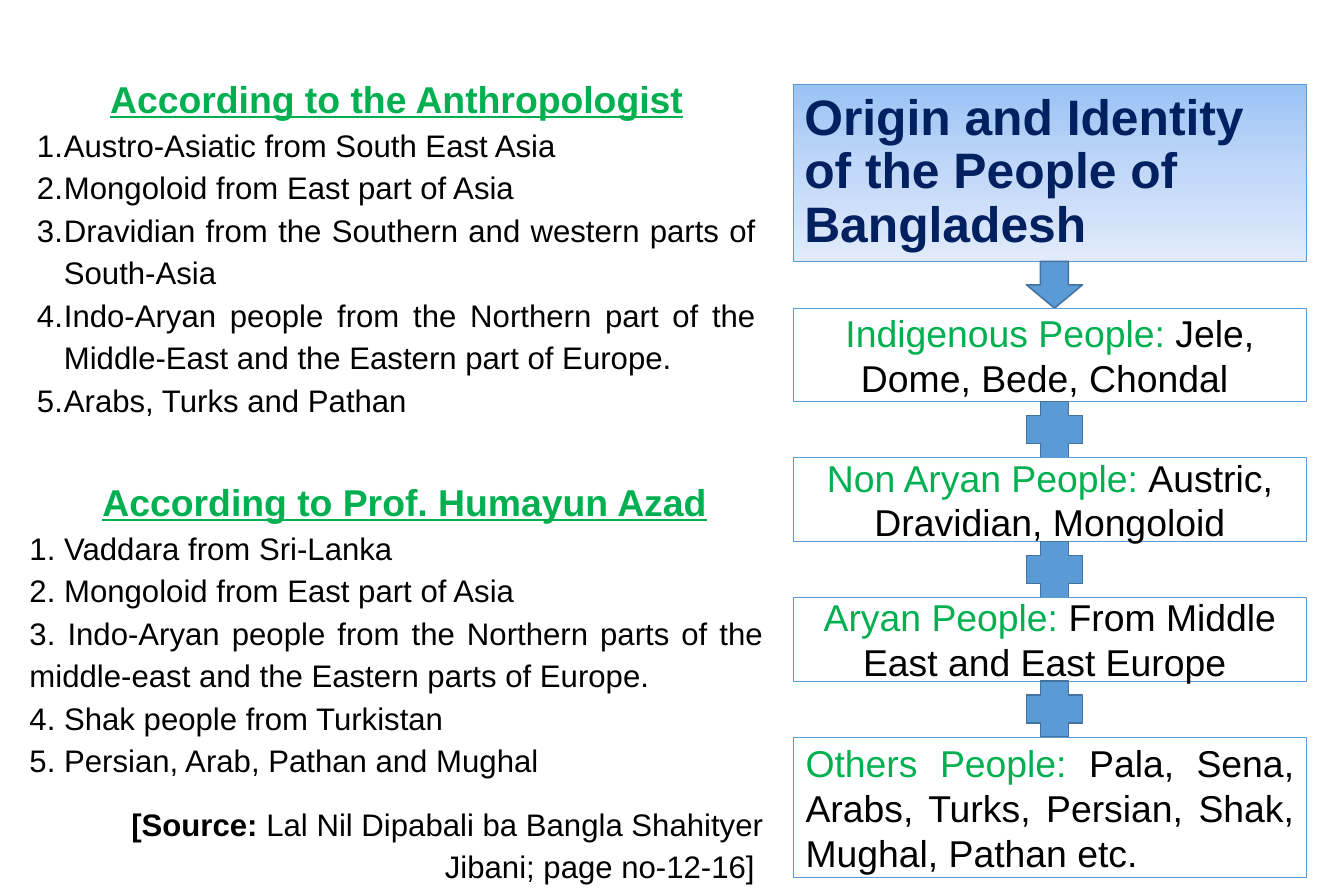
from copy import deepcopy
from pptx import Presentation
from pptx.dml.color import RGBColor
from pptx.enum.shapes import MSO_SHAPE as Preset
from pptx.enum.text import MSO_ANCHOR as Anchor, MSO_AUTO_SIZE as AutoSize, PP_ALIGN as Align
from pptx.oxml.ns import qn
from pptx.oxml.xmlchemy import OxmlElement
from pptx.util import Cm, Pt

NAVY = RGBColor(0x00, 0x20, 0x60)
GREEN = RGBColor(0x00, 0xB0, 0x50)
BLACK = RGBColor(0x00, 0x00, 0x00)
BLUE = RGBColor(0x5B, 0x9B, 0xD5)
DARK_BLUE = RGBColor(0x43, 0x73, 0x9E)
TITLE_SHADES = [RGBColor(0x9A, 0xC3, 0xF5), RGBColor(0xC2, 0xD8, 0xF8), RGBColor(0xE1, 0xEB, 0xFB)]

TITLE = {"size": Pt(32), "bold": True, "color": NAVY}
HEADING = {"size": Pt(24), "bold": True, "underline": True, "color": GREEN}
ITEM = {"size": Pt(20), "bold": False, "color": BLACK}
SOURCE = {"size": Pt(20), "bold": True, "color": BLACK}
GROUP = {"size": Pt(24), "color": GREEN}
MEMBERS = {"size": Pt(24), "color": BLACK}
LIST_SPACING = 1.14


def write(paragraph, align, runs, left=0, first=0, spacing=1.0):
    paragraph.alignment = align
    paragraph.line_spacing = spacing
    properties = paragraph._p.get_or_add_pPr()
    properties.set("marL", str(Cm(left)))
    properties.set("indent", str(Cm(first)))
    for text, formats in runs:
        run = paragraph.add_run()
        run.text = text
        run.font.name = "Arial"
        for name, value in formats.items():
            if name == "color":
                run.font.color.rgb = value
            else:
                setattr(run.font, name, value)
    return properties


def set_frame(frame, anchor, side, edge):
    formats = {
        "word_wrap": True, "auto_size": AutoSize.NONE, "vertical_anchor": anchor,
        "margin_left": Cm(side), "margin_right": Cm(side),
        "margin_top": Cm(edge), "margin_bottom": Cm(edge),
    }
    for name, value in formats.items():
        setattr(frame, name, value)


deck = Presentation()
deck.slide_width, deck.slide_height = Cm(30.48), Cm(20.32)
slide = deck.slides.add_slide(deck.slide_layouts[5])
shapes = slide.shapes

column_left, column_width = 17.99, 11.64

title = shapes.title
title.left, title.top = Cm(column_left), Cm(1.91)
title.width, title.height = Cm(column_width), Cm(4.02)
title.fill.gradient()
title.fill.gradient_angle = 270
stop_list = title.element.find(".//" + qn("a:gsLst"))
stop_list.append(deepcopy(stop_list[0]))
for stop, position, shade in zip(title.fill.gradient_stops, (0, 0.5, 1), TITLE_SHADES):
    stop.position = position
    stop.color.rgb = shade
title.line.color.rgb = BLUE
title.line.width = Pt(0.75)
set_frame(title.text_frame, Anchor.MIDDLE, 0.25, 0.13)
title_line = title.text_frame.paragraphs[0]
write(title_line, Align.LEFT, [("Origin and Identity ", TITLE)], spacing=0.9)
title_line.add_line_break()
write(title_line, Align.LEFT, [("of the People of Bangladesh", TITLE)], spacing=0.9)

azad = shapes.add_textbox(Cm(0.42), Cm(10.59), Cm(17.15), Cm(9.73)).text_frame
set_frame(azad, Anchor.TOP, 0.25, 0.13)
write(azad.paragraphs[0], Align.CENTER, [("According to Prof. Humayun Azad", HEADING)],
      1.17, -0.81, LIST_SPACING)
azad_items = [
    ("1. Vaddara from Sri-Lanka", 1.07),
    ("2. Mongoloid from East part of Asia", 1.07),
    ("3. Indo-Aryan people from the Northern parts of the middle-east "
     "and the Eastern parts of Europe.", 0),
    ("4. Shak people from Turkistan", 1.07),
    ("5. Persian, Arab, Pathan and Mughal", 1.07),
]
for text, hanging in azad_items:
    write(azad.add_paragraph(), Align.JUSTIFY, [(text, ITEM)], hanging, -hanging, LIST_SPACING)
source = azad.add_paragraph()
write(source, Align.RIGHT,
      [("[Source: ", SOURCE), ("Lal Nil Dipabali ba Bangla Shahityer Jibani; page no-12-16] ", ITEM)],
      1.17, -0.81, LIST_SPACING)
source.space_before = Pt(13.5)

anthropologist = shapes.add_textbox(Cm(0.64), Cm(1.48), Cm(16.71), Cm(8.2)).text_frame
set_frame(anthropologist, Anchor.TOP, 0.2, 0.1)
write(anthropologist.paragraphs[0], Align.CENTER,
      [("According to the Anthropologist", HEADING)], spacing=LIST_SPACING)
anthropologist_items = [
    "Austro-Asiatic from South East Asia",
    "Mongoloid from East part of Asia",
    "Dravidian from the Southern and western parts of South-Asia",
    "Indo-Aryan people from the Northern part of the Middle-East and the Eastern part of Europe.",
    "Arabs, Turks and Pathan",
]
for text in anthropologist_items:
    properties = write(anthropologist.add_paragraph(), Align.JUSTIFY, [(text, ITEM)],
                       0.61, -0.61, LIST_SPACING)
    numbering = OxmlElement("a:buAutoNum")
    numbering.set("type", "arabicPeriod")
    properties.append(numbering)

groups = [
    ("Indigenous People: ", "Jele, Dome, Bede, Chondal ", 2.12, Align.CENTER, Preset.DOWN_ARROW, 1.06),
    ("Non Aryan People: ", "Austric, Dravidian, Mongoloid", 1.9, Align.CENTER, Preset.CROSS, 1.27),
    ("Aryan People:", " From Middle East and East Europe ", 1.9, Align.CENTER, Preset.CROSS, 1.27),
    ("Others People: ", "Pala, Sena, Arabs, Turks, Persian, Shak, Mughal, Pathan etc. ",
     3.18, Align.JUSTIFY, Preset.CROSS, 1.27),
]
top = 5.93
for group, members, height, align, sign_preset, sign_height in groups:
    sign = shapes.add_shape(sign_preset, Cm(23.28), Cm(top), Cm(1.27), Cm(sign_height))
    sign.shadow.inherit = False
    sign.fill.solid()
    sign.fill.fore_color.rgb = BLUE
    sign.line.color.rgb = DARK_BLUE
    sign.line.width = Pt(1)
    top += sign_height

    box = shapes.add_shape(Preset.RECTANGLE, Cm(column_left), Cm(top), Cm(column_width), Cm(height))
    box.shadow.inherit = False
    box.fill.background()
    box.line.color.rgb = BLUE
    box.line.width = Pt(0.75)
    set_frame(box.text_frame, Anchor.MIDDLE, 0.28, 0.15)
    write(box.text_frame.paragraphs[0], align, [(group, GROUP), (members, MEMBERS)])
    top += height

deck.save("out.pptx")
